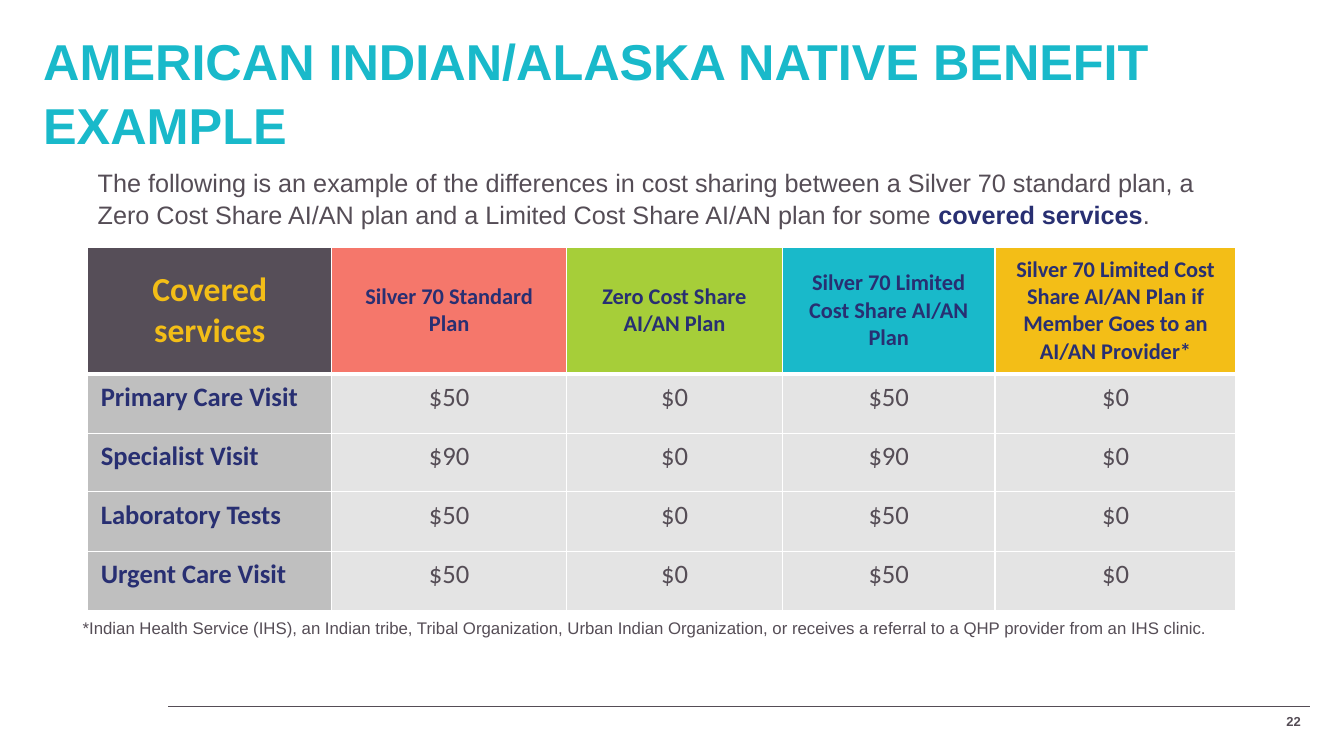
from dataclasses import dataclass

from lxml.etree import SubElement
from pptx import Presentation
from pptx.dml.color import RGBColor
from pptx.enum.shapes import MSO_CONNECTOR
from pptx.enum.text import MSO_ANCHOR, PP_ALIGN
from pptx.oxml.ns import qn
from pptx.slide import Slide
from pptx.table import _Cell as Cell
from pptx.text.text import _Run as Run
from pptx.util import Inches, Pt

SLATE, NAVY, TEAL, GOLD = "554D56", "282F72", "19B9CA", "F3BE17"
WHITE, LABEL_GREY, VALUE_GREY = "FFFFFF", "BFBFBF", "E4E4E4"


@dataclass
class Style:
    size: float
    color: str = SLATE
    bold: bool = False
    font: str = "Arial"


@dataclass
class TextArea:
    left: float
    top: float
    width: float
    height: float
    runs: list[tuple[str, Style]]
    side_inset: float = 0.1
    spacing: float = 1.0
    align: PP_ALIGN = PP_ALIGN.LEFT
    anchor: MSO_ANCHOR = MSO_ANCHOR.TOP


@dataclass
class Column:
    heading: str
    width: float
    fill: str
    entries: list[str]


BODY = Style(18)
HEADING = Style(16, NAVY, True, "Calibri")
CORNER = Style(24, GOLD, True, "Calibri")
SERVICE = Style(19, NAVY, True, "Calibri")
COST = Style(19, SLATE, False, "Calibri")

TEXT_AREAS = [
    TextArea(0.33, 0.2, 12.67, 0.92,
             [("AMERICAN INDIAN/ALASKA NATIVE BENEFIT EXAMPLE", Style(36, TEAL, True))],
             spacing=1.05),
    TextArea(0.87, 1.58, 11.39, 0.8,
             [("The following is an example of the differences in cost sharing between "
               "a Silver 70 standard plan, a Zero Cost Share AI/AN plan and a Limited "
               "Cost Share AI/AN plan for some ", BODY),
              ("covered services", Style(18, NAVY, True)),
              (".", BODY)],
             spacing=1.05),
    TextArea(0.69, 6.06, 11.96, 0.4,
             [("*Indian Health Service (IHS), an Indian tribe, Tribal Organization, Urban "
               "Indian Organization, or receives a referral to a QHP provider from an "
               "IHS clinic.", Style(12))],
             side_inset=0.13),
    TextArea(11.93, 6.96, 1.07, 0.4, [("22", Style(9.3, bold=True))],
             align=PP_ALIGN.RIGHT, anchor=MSO_ANCHOR.MIDDLE),
]

NO_COST = ["$0"] * 4
STANDARD_COST = ["$50", "$90", "$50", "$50"]
COLUMNS = [
    Column("Covered services", 2.42, "564E58",
           ["Primary Care Visit", "Specialist Visit", "Laboratory Tests", "Urgent Care Visit"]),
    Column("Silver 70 Standard Plan", 2.33, "F5776B", STANDARD_COST),
    Column("Zero Cost Share AI/AN Plan", 2.14, "A6CE39", NO_COST),
    Column("Silver 70 Limited Cost Share AI/AN Plan", 2.11, TEAL, STANDARD_COST),
    Column("Silver 70 Limited Cost Share AI/AN Plan if Member Goes to an AI/AN Provider*",
           2.39, GOLD, NO_COST),
]
ROW_HEIGHTS = [1.26, 0.59, 0.58, 0.59, 0.59]


def rgb(color: str) -> RGBColor:
    return RGBColor.from_string(color)


def format_run(run: Run, style: Style) -> None:
    run.font.name = style.font
    run.font.size = Pt(style.size)
    run.font.bold = style.bold
    run.font.color.rgb = rgb(style.color)


def add_text(slide: Slide, area: TextArea) -> None:
    box = slide.shapes.add_textbox(*map(Inches, (area.left, area.top, area.width, area.height)))
    frame = box.text_frame
    frame.word_wrap = True
    frame.vertical_anchor = area.anchor
    frame.margin_left = frame.margin_right = Inches(area.side_inset)
    frame.margin_top = frame.margin_bottom = Inches(0.07)
    paragraph = frame.paragraphs[0]
    paragraph.alignment = area.align
    paragraph.line_spacing = area.spacing
    for text, style in area.runs:
        run = paragraph.add_run()
        run.text = text
        format_run(run, style)


def add_borders(cell: Cell, bottom_width: float) -> None:
    """Draw white edges; they must come before the fill in the cell properties."""
    properties = cell._tc.get_or_add_tcPr()
    for edge, width in (("lnL", 1), ("lnR", 1), ("lnT", 1), ("lnB", bottom_width)):
        line = SubElement(properties, qn(f"a:{edge}"), w=str(Pt(width)))
        fill = SubElement(line, qn("a:solidFill"))
        SubElement(fill, qn("a:srgbClr"), val=WHITE)


def fill_cell(cell: Cell, text: str, style: Style, fill: str,
              centred: bool, is_heading: bool) -> None:
    add_borders(cell, 3 if is_heading else 1)
    cell.fill.solid()
    cell.fill.fore_color.rgb = rgb(fill)
    cell.margin_left = cell.margin_right = Inches(0.13)
    cell.margin_top = cell.margin_bottom = Inches(0.07)
    cell.vertical_anchor = MSO_ANCHOR.MIDDLE if is_heading else MSO_ANCHOR.TOP
    cell.text_frame.text = text
    paragraph = cell.text_frame.paragraphs[0]
    paragraph.alignment = PP_ALIGN.CENTER if centred else PP_ALIGN.LEFT
    format_run(paragraph.runs[0], style)


def add_cost_table(slide: Slide) -> None:
    table = slide.shapes.add_table(len(ROW_HEIGHTS), len(COLUMNS), Inches(0.87), Inches(2.45),
                                   Inches(sum(column.width for column in COLUMNS)),
                                   Inches(sum(ROW_HEIGHTS))).table
    table.horz_banding = False
    for row, height in zip(table.rows, ROW_HEIGHTS):
        row.height = Inches(height)
    for index, column in enumerate(COLUMNS):
        is_service = index == 0
        table.columns[index].width = Inches(column.width)
        fill_cell(table.cell(0, index), column.heading, CORNER if is_service else HEADING,
                  column.fill, centred=True, is_heading=True)
        for row_index, entry in enumerate(column.entries, start=1):
            fill_cell(table.cell(row_index, index), entry, SERVICE if is_service else COST,
                      LABEL_GREY if is_service else VALUE_GREY,
                      centred=not is_service, is_heading=False)


def add_footer_rule(slide: Slide) -> None:
    rule = slide.shapes.add_connector(MSO_CONNECTOR.STRAIGHT, Inches(1.67), Inches(7.01),
                                      Inches(12.99), Inches(7.01))
    rule.line.color.rgb = rgb(SLATE)
    rule.line.width = Pt(1)
    SubElement(rule._element.spPr, qn("a:effectLst"))


def main() -> None:
    presentation = Presentation()
    presentation.slide_width = Inches(13.33)
    presentation.slide_height = Inches(7.5)
    slide = presentation.slides.add_slide(presentation.slide_layouts[6])
    add_footer_rule(slide)
    add_cost_table(slide)
    for area in TEXT_AREAS:
        add_text(slide, area)
    presentation.save("out.pptx")


if __name__ == "__main__":
    main()
